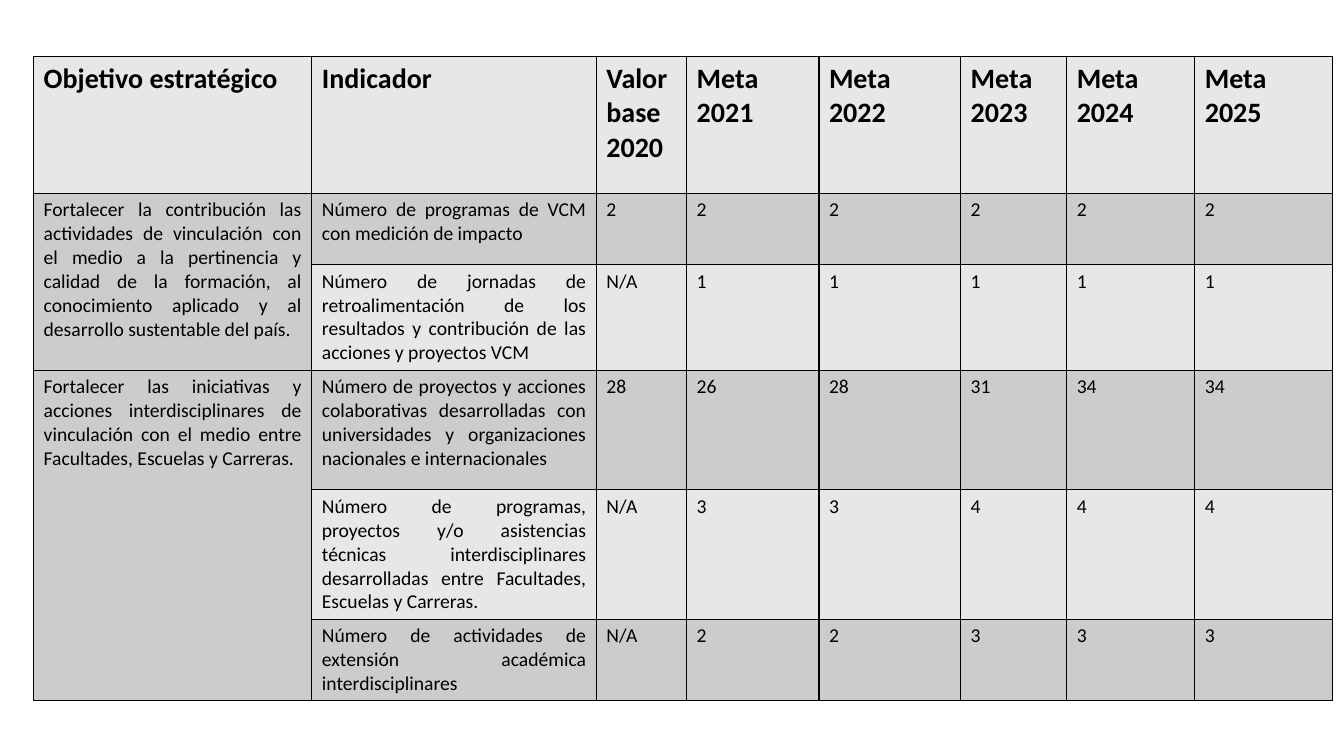
from lxml import etree
from pptx import Presentation
from pptx.dml.color import RGBColor
from pptx.enum.text import PP_ALIGN as Align
from pptx.oxml.ns import qn
from pptx.util import Pt

PX = 9525
LIGHT, DARK, BLACK = "E7E7E7", "CCCCCC", "000000"
COLUMN_WIDTHS = [265, 271, 86, 126, 135, 101, 122, 131]
ROW_HEIGHTS = [130, 68, 93, 114, 114, 72]
HEADERS = ["Objetivo estratégico", "Indicador", "Valor base 2020"]
HEADERS += [f"Meta {year}" for year in range(2021, 2026)]

# Each objective with its indicators: name, base value and yearly goals
OBJECTIVES = [
    ("Fortalecer la contribución las actividades de vinculación con el medio a la "
     "pertinencia y calidad de la formación, al conocimiento aplicado y al "
     "desarrollo sustentable del país.",
     [("Número de programas de VCM con medición de impacto", "2", 2, 2, 2, 2, 2),
      ("Número de jornadas de retroalimentación de los resultados y contribución "
       "de las acciones y proyectos VCM", "N/A", 1, 1, 1, 1, 1)]),
    ("Fortalecer las iniciativas y acciones interdisciplinares de vinculación con "
     "el medio entre Facultades, Escuelas y Carreras.",
     [("Número de proyectos y acciones colaborativas desarrolladas con "
       "universidades y organizaciones nacionales e internacionales",
       "28", 26, 28, 31, 34, 34),
      ("Número de programas, proyectos y/o asistencias técnicas interdisciplinares "
       "desarrolladas entre Facultades, Escuelas y Carreras.",
       "N/A", 3, 3, 4, 4, 4),
      ("Número de actividades de extensión académica interdisciplinares",
       "N/A", 2, 2, 3, 3, 3)]),
]


def color(hex_string):
    return RGBColor.from_string(hex_string)


def add_borders(cell):
    properties = cell._tc.get_or_add_tcPr()
    for side in ("a:lnL", "a:lnR", "a:lnT", "a:lnB"):
        line = etree.SubElement(properties, qn(side), w=str(Pt(1)))
        fill = etree.SubElement(line, qn("a:solidFill"))
        etree.SubElement(fill, qn("a:srgbClr"), val=BLACK)


def style_cell(cell, fill):
    add_borders(cell)
    cell.fill.solid()
    cell.fill.fore_color.rgb = color(fill)


def write_cell(cell, text, size=14, bold=False, align=Align.LEFT):
    cell.text = str(text)
    paragraph = cell.text_frame.paragraphs[0]
    paragraph.alignment = align
    font = paragraph.font
    font.name, font.size, font.bold = "Calibri", Pt(size), bold
    font.color.rgb = color(BLACK)


def add_goals_table(slide, left, top):
    frame = slide.shapes.add_table(
        len(ROW_HEIGHTS), len(COLUMN_WIDTHS), left * PX, top * PX,
        sum(COLUMN_WIDTHS) * PX, sum(ROW_HEIGHTS) * PX)
    table = frame.table
    for column, width in zip(table.columns, COLUMN_WIDTHS):
        column.width = width * PX
    for index, (row, height) in enumerate(zip(table.rows, ROW_HEIGHTS)):
        row.height = height * PX
        for cell in row.cells:
            style_cell(cell, DARK if index % 2 else LIGHT)

    for column, header in enumerate(HEADERS):
        write_cell(table.cell(0, column), header, size=20, bold=True)

    row = 1
    for objective, indicators in OBJECTIVES:
        objective_cell = table.cell(row, 0)
        objective_cell.merge(table.cell(row + len(indicators) - 1, 0))
        write_cell(objective_cell, objective, align=Align.JUSTIFY)
        for name, *values in indicators:
            write_cell(table.cell(row, 1), name, align=Align.JUSTIFY)
            for column, value in enumerate(values, start=2):
                write_cell(table.cell(row, column), value)
            row += 1


def main():
    presentation = Presentation()
    presentation.slide_width = 1280 * PX
    presentation.slide_height = 720 * PX
    slide = presentation.slides.add_slide(presentation.slide_layouts[6])
    add_goals_table(slide, left=32, top=54)
    presentation.save("out.pptx")


if __name__ == "__main__":
    main()
